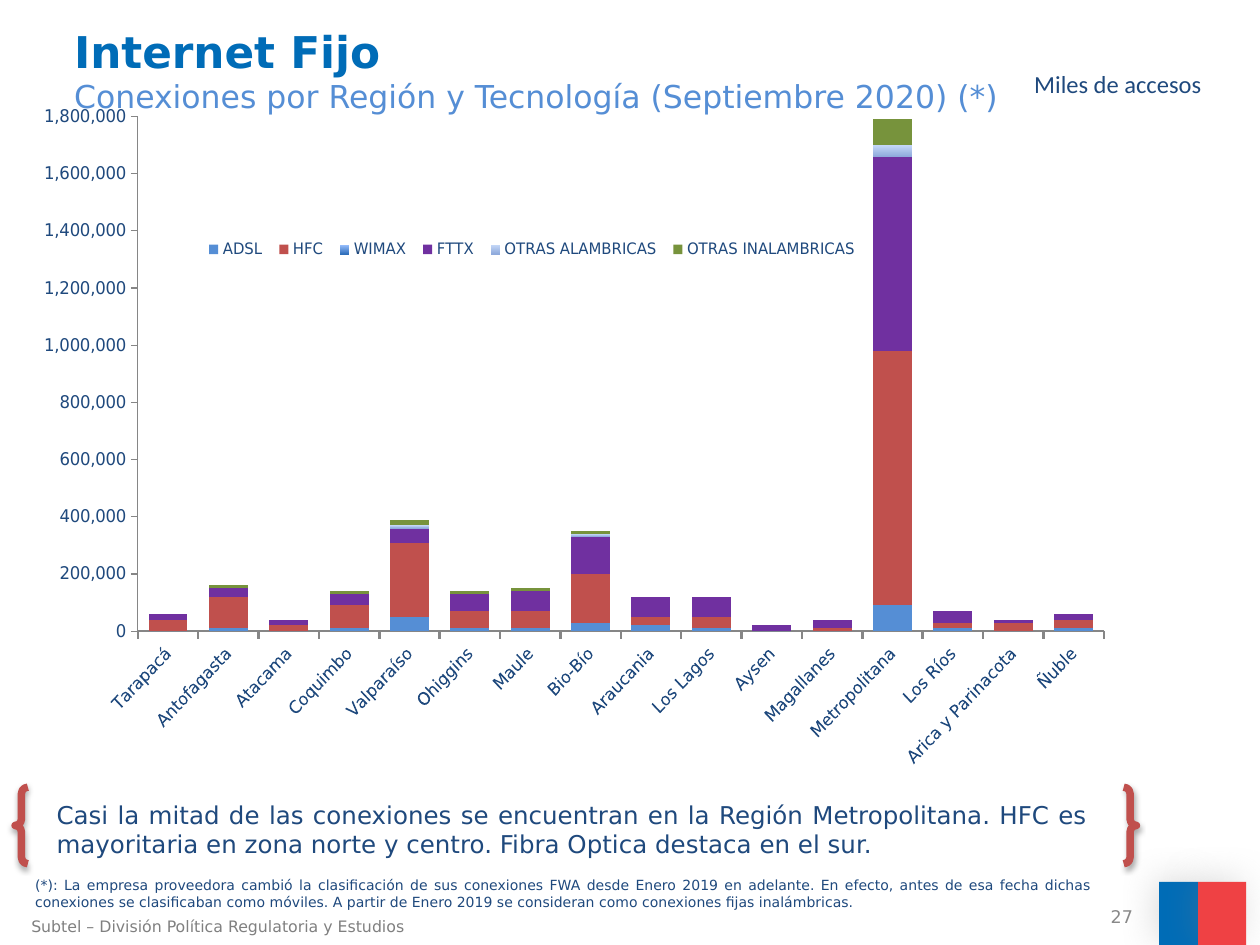
from lxml.etree import SubElement
from pptx import Presentation
from pptx.chart.data import CategoryChartData
from pptx.dml.color import RGBColor
from pptx.enum.chart import XL_AXIS_CROSSES as Crosses, XL_CHART_TYPE as ChartType
from pptx.enum.chart import XL_LEGEND_POSITION as LegendPosition, XL_TICK_MARK as TickMark
from pptx.enum.shapes import MSO_SHAPE as Shape
from pptx.enum.text import MSO_ANCHOR as Anchor, PP_ALIGN as Align
from pptx.oxml import parse_xml
from pptx.oxml.ns import nsdecls, qn
from pptx.util import Inches, Pt

WIDTH, HEIGHT = Inches(10), Inches(7.5)
SANS = "DejaVu Sans"
NAVY, BLUE, LIGHT_BLUE, RED = "1F497D", "006CB7", "558ED5", "C0504D"

REGIONS = ["Tarapacá", "Antofagasta", "Atacama", "Coquimbo", "Valparaíso", "Ohiggins",
           "Maule", "Bio-Bío", "Araucania", "Los Lagos", "Aysen", "Magallanes",
           "Metropolitana", "Los Ríos", "Arica y Parinacota", "Ñuble"]
# Thousands of connections per region, then one colour or the two ends of a gradient
TECHNOLOGIES = [
    ("ADSL", [0, 10, 0, 10, 50, 10, 10, 30, 20, 10, 0, 0, 90, 10, 0, 10], [LIGHT_BLUE]),
    ("HFC", [40, 110, 20, 80, 260, 60, 60, 170, 30, 40, None, 10, 890, 20, 30, 30], [RED]),
    ("WIMAX", [0, 0, 0, 0, 0, 0, 0, 0, 0, 0, None, 0, 0, None, 0, 0], ["9BC1FF", "2F6EBA"]),
    ("FTTX", [20, 30, 20, 40, 50, 60, 70, 130, 70, 70, 20, 30, 680, 40, 10, 20], ["7030A0"]),
    ("OTRAS ALAMBRICAS", [0, 0, 0, 0, 10, 0, 0, 10, 0, 0, 0, 0, 40, 0, 0, 0],
     ["C6D9F8", "8FAADC"]),
    ("OTRAS INALAMBRICAS", [0, 10, 0, 10, 20, 10, 10, 10, 0, 0, 0, 0, 90, 0, 0, 0],
     ["77933C"]),
]


def color(hex_text):
    return RGBColor.from_string(hex_text)


def place(left, top, width, height):
    """Turn percentages of the slide into lengths."""
    return [int(share * side / 100) for share, side in
            zip((left, top, width, height), (WIDTH, HEIGHT) * 2)]


def style_font(font, size, ink=NAVY, face=SANS, bold=False):
    font.size, font.name, font.bold = Pt(size), face, bold
    font.color.rgb = color(ink)


def write(para, text, **style):
    span = para.add_run()
    span.text = text
    style_font(span.font, **style)


def add_text(page, area, text, align=Align.LEFT, anchor=Anchor.TOP, wrap=True, **style):
    """Add a text box and return its paragraph."""
    frame = page.shapes.add_textbox(*place(*area)).text_frame
    frame.word_wrap, frame.vertical_anchor = wrap, anchor
    para = frame.paragraphs[0]
    para.alignment = align
    write(para, text, **style)
    return para


def add_shape(page, kind, area, shadow, fill=None, line=None, weight=1):
    shape = page.shapes.add_shape(kind, *place(*area))
    if fill:
        shape.fill.solid()
        shape.fill.fore_color.rgb = color(fill)
    else:
        shape.fill.background()
    if line:
        shape.line.color.rgb = color(line)
        shape.line.width = Pt(weight)
    else:
        shape.line.fill.background()
    cast_shadow(shape, *shadow)


def cast_shadow(shape, ink, opacity, blur, distance, angle):
    shape.shadow.inherit = False
    effects = shape._element.spPr.find(qn("a:effectLst"))
    effects.append(parse_xml(
        f'<a:outerShdw {nsdecls("a")} blurRad="{Pt(blur)}" dist="{Pt(distance)}" '
        f'dir="{angle * 60000}" rotWithShape="0"><a:srgbClr val="{ink}">'
        f'<a:alpha val="{opacity * 1000}"/></a:srgbClr></a:outerShdw>'))


def set_layout(part, x, y, w, h, inner=False):
    """Fix a chart part at shares of the chart's size."""
    layout = part.get_or_add_layout() if hasattr(part, "get_or_add_layout") else part.find(qn("c:layout"))
    if layout is None:
        layout = SubElement(part, qn("c:layout"))
        part.insert(0, layout)
    for child in list(layout):
        layout.remove(child)
    manual = SubElement(layout, qn("c:manualLayout"))
    settings = [("layoutTarget", "inner")] if inner else []
    settings += [("xMode", "edge"), ("yMode", "edge"), ("x", x), ("y", y), ("w", w), ("h", h)]
    for tag, value in settings:
        SubElement(manual, qn(f"c:{tag}")).set("val", str(value))


def fill_series(fill, colors):
    if len(colors) == 1:
        fill.solid()
        fill.fore_color.rgb = color(colors[0])
        return
    fill.gradient()
    fill.gradient_angle = 270
    for stop, ink in zip(fill.gradient_stops, colors):
        stop.color.rgb = color(ink)


def style_axis(axis, weight):
    axis.has_major_gridlines = False
    axis.major_tick_mark, axis.minor_tick_mark = TickMark.OUTSIDE, TickMark.NONE
    axis.format.line.color.rgb = color("868686")
    axis.format.line.width = Pt(weight)
    style_font(axis.tick_labels.font, 10)


def add_connections_chart(page, area):
    data = CategoryChartData(number_format="#,##0")
    data.categories = REGIONS
    for name, thousands, _ in TECHNOLOGIES:
        data.add_series(name, [None if n is None else n * 1000 for n in thousands])
    chart = page.shapes.add_chart(ChartType.COLUMN_STACKED, *place(*area), data).chart
    chart.has_title = False
    style_font(chart.font, 10)
    plot = chart.plots[0]
    plot.gap_width, plot.overlap, plot.vary_by_categories = 55, 100, False
    for series, (_, _, colors) in zip(plot.series, TECHNOLOGIES):
        series.invert_if_negative = False
        fill_series(series.format.fill, colors)

    regions, amounts = chart.category_axis, chart.value_axis
    style_axis(regions, 1.5)
    style_axis(amounts, 0.75)
    regions.crosses = Crosses.MAXIMUM
    regions._element.find(f"{qn('c:txPr')}/{qn('a:bodyPr')}").set("rot", str(-45 * 60000))
    amounts.minimum_scale, amounts.maximum_scale, amounts.major_unit = 0, 1800000, 200000
    amounts.tick_labels.number_format = "#,##0"
    amounts.tick_labels.number_format_is_linked = False

    chart.has_legend = True
    chart.legend.position = LegendPosition.BOTTOM
    chart.legend.include_in_layout = False
    style_font(chart.legend.font, 9)
    set_layout(chart.legend._element, 0.08, 0.21, 0.61, 0.04)
    set_layout(chart._chartSpace.chart.plotArea, 0.026, 0.057, 0.88, 0.67, inner=True)


def main():
    deck = Presentation()
    deck.slide_width, deck.slide_height = WIDTH, HEIGHT
    page = deck.slides.add_slide(deck.slide_layouts[6])

    for left, width, fill in ((92, 3.1, BLUE), (95.1, 3.8, "EF4144")):
        add_shape(page, Shape.RECTANGLE, (left, 93.33, width, 6.67),
                  ("808080", 25, 20, 3, 215), fill=fill)

    title = add_text(page, (4.9, 1.5, 87, 11.7), "Internet Fijo", anchor=Anchor.MIDDLE,
                     size=25, ink=BLUE, bold=True)
    title.add_line_break()
    write(title, "Conexiones por Región y Tecnología (Septiembre 2020) (*)",
          size=18, ink=LIGHT_BLUE)

    message = add_text(
        page, (3.5, 84, 83.8, 7.6),
        "Casi la mitad de las conexiones se encuentran en la Región Metropolitana. HFC es "
        "mayoritaria en zona norte y centro. Fibra Optica destaca en el sur.",
        align=Align.JUSTIFY, size=14)
    message.space_after = Pt(12)
    add_shape(page, Shape.DOUBLE_BRACE, (1.2, 83.3, 89, 8.1),
              ("000000", 35, 3.1, 1.8, 90), line=RED, weight=4.25)
    add_text(page, (1.5, 96.4, 53.3, 3.3), "Subtel – División Política Regulatoria y Estudios",
             size=9, ink="808080")

    add_connections_chart(page, (3.5, 7.7, 92.3, 81.3))
    add_text(page, (81.1, 6.67, 15.7, 4.5), "Miles de accesos", wrap=False,
             size=14, face="Calibri")
    add_text(page, (67.6, 95.2, 23.3, 3.6), "27", align=Align.RIGHT, anchor=Anchor.MIDDLE,
             size=10, ink="898989")
    add_text(
        page, (1.8, 92.1, 85.9, 4.9),
        "(*): La empresa proveedora cambió la clasificación de sus conexiones FWA desde Enero "
        "2019 en adelante. En efecto, antes de esa fecha dichas conexiones se clasificaban como "
        "móviles. A partir de Enero 2019 se consideran como conexiones fijas inalámbricas.",
        align=Align.JUSTIFY, size=8)
    deck.save("out.pptx")


if __name__ == "__main__":
    main()
